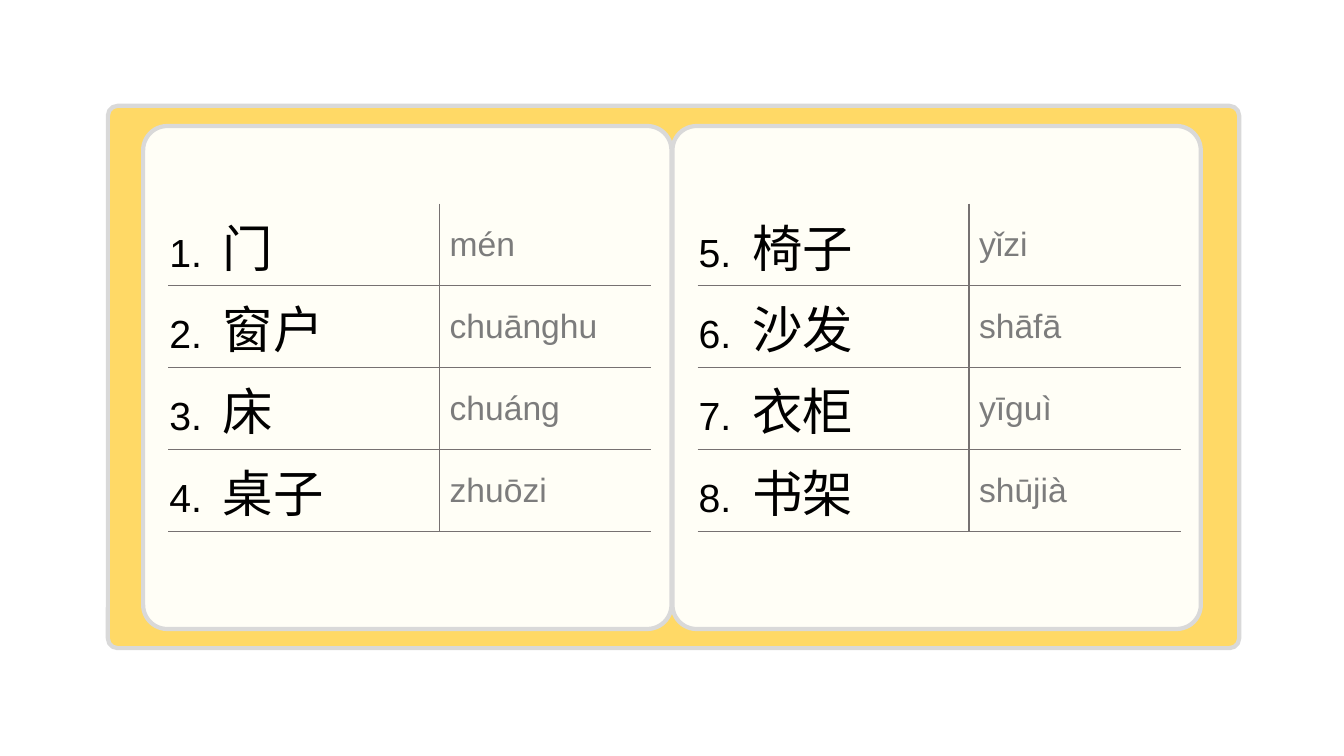
from dataclasses import dataclass

from lxml import etree
from pptx import Presentation
from pptx import util as u
from pptx.dml.color import RGBColor
from pptx.enum import shapes, text
from pptx.oxml import ns


@dataclass(frozen=True)
class Theme:
    cover: str = "FFD966"
    page: str = "FFFEF6"
    outline: str = "D9D9D9"
    rule: str = "767171"
    word: str = "000000"
    pinyin: str = "7C7C7C"
    latin_font: str = "Arial"
    chinese_font: str = "Noto Sans CJK SC"
    number_size: int = 28
    word_size: int = 36
    pinyin_size: int = 24
    outline_width: int = 3
    rule_width: int = 1


@dataclass(frozen=True)
class Panel:
    left: float
    top: float
    width: float
    height: float
    corner: float
    fill: str


@dataclass(frozen=True)
class Entry:
    word: str
    pinyin: str


@dataclass(frozen=True)
class WordList:
    left: float
    first_number: int
    entries: tuple[Entry, ...]


THEME = Theme()
PANELS = (
    Panel(1.07, 1.05, 11.22, 5.38, 0.018, THEME.cover),
    Panel(1.42, 1.25, 5.24, 4.99, 0.048, THEME.page),
    Panel(6.67, 1.25, 5.24, 4.99, 0.048, THEME.page),
)
WORD_LISTS = (
    WordList(1.67, 1, (
        Entry("门", "mén"),
        Entry("窗户", "chuānɡhu"),
        Entry("床", "chuánɡ"),
        Entry("桌子", "zhuōzi"),
    )),
    WordList(6.92, 5, (
        Entry("椅子", "yǐzi"),
        Entry("沙发", "shāfā"),
        Entry("衣柜", "yīɡuì"),
        Entry("书架", "shūjià"),
    )),
)
LIST_TOP = 2.02
ROW_HEIGHT = 0.8125
COLUMN_WIDTHS = (2.69, 2.1)
WORD_INDENT = 0.53


def add_panel(container, panel: Panel) -> None:
    """Draw a rounded, outlined panel of the notebook."""
    bounds = map(u.Inches, (panel.left, panel.top, panel.width, panel.height))
    shape = container.add_shape(shapes.MSO_SHAPE.ROUNDED_RECTANGLE, *bounds)
    shape.adjustments[0] = panel.corner
    shape.shadow.inherit = False
    shape.fill.solid()
    shape.fill.fore_color.rgb = RGBColor.from_string(panel.fill)
    shape.line.color.rgb = RGBColor.from_string(THEME.outline)
    shape.line.width = u.Pt(THEME.outline_width)


def format_run(run, size: int, color: str, font: str) -> None:
    """Set the size, colour and typeface of a run."""
    run.font.size = u.Pt(size)
    run.font.name = font
    run.font.color.rgb = RGBColor.from_string(color)
    etree.SubElement(run.font._element, ns.qn("a:ea"), typeface=font)


def set_borders(cell, ruled_sides: str) -> None:
    """Rule the named sides of a cell and clear the others."""
    properties = cell._tc.get_or_add_tcPr()
    for position, side in enumerate("LRTB"):
        line = etree.Element(ns.qn(f"a:ln{side}"), w=str(u.Pt(THEME.rule_width)))
        if side in ruled_sides:
            fill = etree.SubElement(line, ns.qn("a:solidFill"))
            etree.SubElement(fill, ns.qn("a:srgbClr"), val=THEME.rule)
        else:
            etree.SubElement(line, ns.qn("a:noFill"))
        properties.insert(position, line)


def prepare_cell(cell, left_margin: float, ruled_sides: str) -> None:
    """Set the margins, anchor, fill and borders of a cell."""
    cell.margin_left = u.Inches(left_margin)
    cell.margin_right = cell.margin_top = u.Inches(0.01)
    cell.margin_bottom = 0
    cell.vertical_anchor = text.MSO_ANCHOR.MIDDLE
    cell.fill.background()
    set_borders(cell, ruled_sides)


def fill_word(cell, number: int, word: str) -> None:
    """Write a numbered word with the word at a tab stop."""
    paragraph = cell.text_frame.paragraphs[0]
    tabs = etree.SubElement(paragraph._p.get_or_add_pPr(), ns.qn("a:tabLst"))
    etree.SubElement(tabs, ns.qn("a:tab"), pos=str(u.Inches(WORD_INDENT)), algn="l")
    paragraph.text = f"{number}.\t"
    format_run(paragraph.runs[0], THEME.number_size, THEME.word, THEME.latin_font)
    run = paragraph.add_run()
    run.text = word
    format_run(run, THEME.word_size, THEME.word, THEME.chinese_font)


def add_word_list(slide, word_list: WordList) -> None:
    """Draw one page's table of words and pinyin."""
    rows = len(word_list.entries)
    bounds = (word_list.left, LIST_TOP, sum(COLUMN_WIDTHS), rows * ROW_HEIGHT)
    table = slide.shapes.add_table(rows, 2, *map(u.Inches, bounds)).table
    table.first_row = table.horz_banding = False
    for column, width in zip(table.columns, COLUMN_WIDTHS):
        column.width = u.Inches(width)
    for index, entry in enumerate(word_list.entries):
        table.rows[index].height = u.Inches(ROW_HEIGHT)
        word_cell, pinyin_cell = table.cell(index, 0), table.cell(index, 1)
        across = "TB" if index else "B"
        prepare_cell(word_cell, 0.01, "R" + across)
        prepare_cell(pinyin_cell, 0.1, "L" + across)
        fill_word(word_cell, word_list.first_number + index, entry.word)
        pinyin_cell.text_frame.text = entry.pinyin
        run = pinyin_cell.text_frame.paragraphs[0].runs[0]
        format_run(run, THEME.pinyin_size, THEME.pinyin, THEME.latin_font)


def main() -> None:
    """Build and save the vocabulary slide."""
    presentation = Presentation()
    presentation.slide_width = u.Inches(13.33)
    presentation.slide_height = u.Inches(7.5)
    slide = presentation.slides.add_slide(presentation.slide_layouts[6])
    notebook = slide.shapes.add_group_shape()
    for panel in PANELS:
        add_panel(notebook.shapes, panel)
    for word_list in WORD_LISTS:
        add_word_list(slide, word_list)
    presentation.save("out.pptx")


if __name__ == "__main__":
    main()
